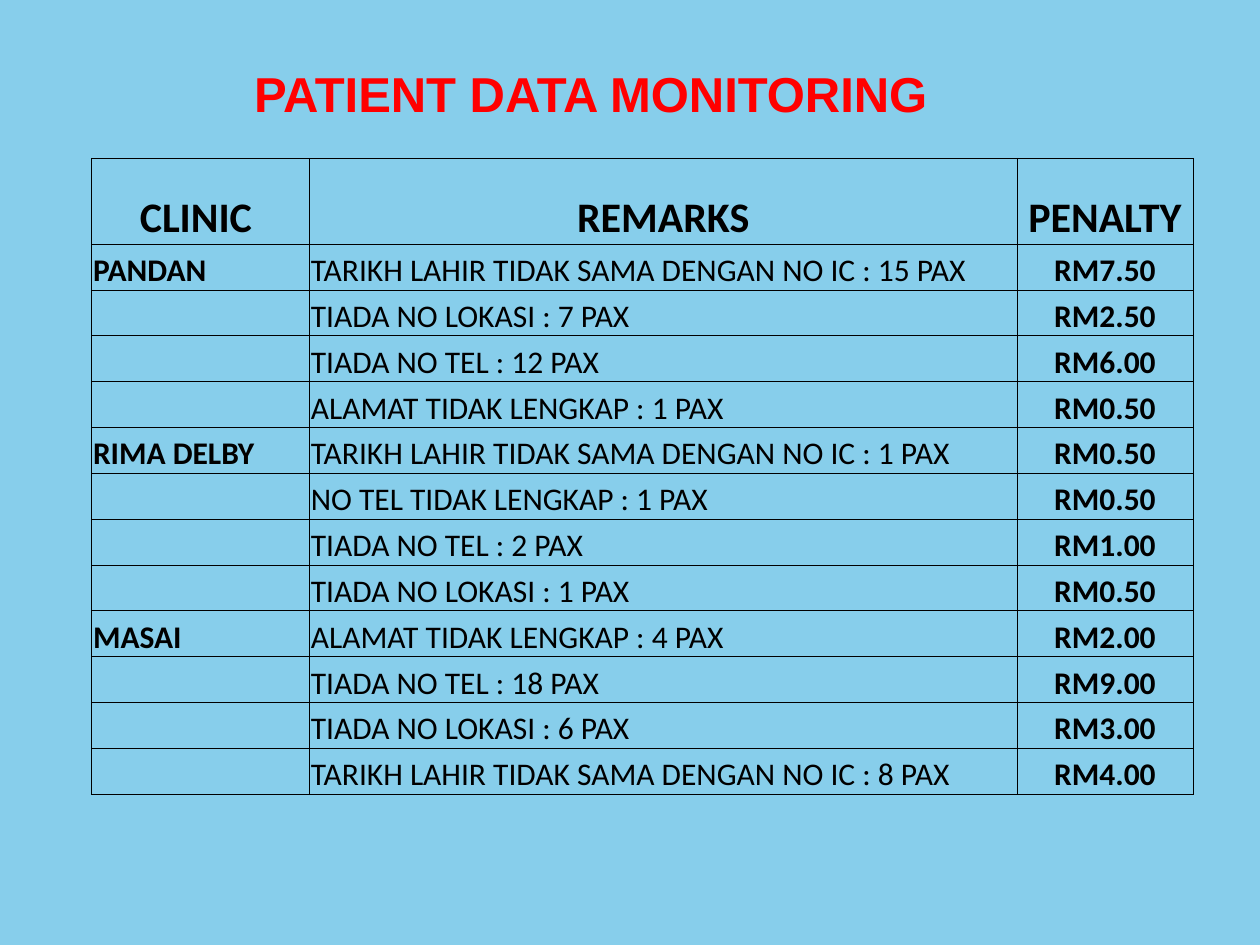
import pptx
import pptx.util
import pptx.dml.color
import pptx.enum.text
import pptx.oxml
import pptx.oxml.ns
from lxml import etree

Pt = pptx.util.Pt
ALIGN = pptx.enum.text.PP_ALIGN
ANCHOR = pptx.enum.text.MSO_ANCHOR

COLORS = {"sky": "87CEEB", "red": "FF0000", "black": "000000"}
HEADS = ["CLINIC ", "REMARKS", "PENALTY"]
CLINICS = {
    "PANDAN": [
        ("TARIKH LAHIR TIDAK SAMA DENGAN NO IC : 15 PAX", "RM7.50"),
        ("TIADA NO LOKASI : 7 PAX", "RM2.50"),
        ("TIADA NO TEL : 12 PAX", "RM6.00"),
        ("ALAMAT TIDAK LENGKAP : 1 PAX", "RM0.50"),
    ],
    "RIMA DELBY": [
        ("TARIKH LAHIR TIDAK SAMA DENGAN NO IC : 1 PAX", "RM0.50"),
        ("NO TEL TIDAK LENGKAP : 1 PAX", "RM0.50"),
        ("TIADA NO TEL : 2 PAX", "RM1.00"),
        ("TIADA NO LOKASI : 1 PAX", "RM0.50"),
    ],
    "MASAI": [
        ("ALAMAT TIDAK LENGKAP : 4 PAX", "RM2.00"),
        ("TIADA NO TEL : 18 PAX", "RM9.00"),
        ("TIADA NO LOKASI : 6 PAX", "RM3.00"),
        ("TARIKH LAHIR TIDAK SAMA DENGAN NO IC : 8 PAX", "RM4.00"),
    ],
}
WIDTHS = [124.5, 404.3, 100.5]
HEAD_H, ROW_H = 49, 26.2
INSETS = {
    "margin_left": Pt(0.75),
    "margin_right": Pt(0.75),
    "margin_top": Pt(0.75),
    "margin_bottom": 0,
    "vertical_anchor": ANCHOR.BOTTOM,
}


def apply(target, values):
    for name, value in values.items():
        setattr(target, name, value)


def paint(color, name):
    color.rgb = pptx.dml.color.RGBColor.from_string(COLORS[name])


def write(frame, text, align, color, **style):
    para = frame.paragraphs[0]
    para.alignment = align
    run = para.add_run()
    run.text = text
    apply(run.font, style)
    paint(run.font.color, color)


def border(cell):
    props = cell._tc.get_or_add_tcPr()
    qn = pptx.oxml.ns.qn
    for side in ("lnL", "lnR", "lnT", "lnB"):
        line = etree.SubElement(props, qn(f"a:{side}"), w=str(Pt(0.5)))
        fill = etree.SubElement(line, qn("a:solidFill"))
        etree.SubElement(fill, qn("a:srgbClr"), val=COLORS["black"])


def title(slide, text):
    box = slide.shapes.add_textbox(Pt(57.6), Pt(30.2), Pt(552.2), Pt(50.4))
    apply(box.text_frame, {"word_wrap": True, "margin_top": Pt(6)})
    write(box.text_frame, text, ALIGN.CENTER, "red",
          name="Arial", size=Pt(28), bold=True)


def grid(slide, rows):
    high = HEAD_H + ROW_H * (len(rows) - 1)
    table = slide.shapes.add_table(
        len(rows), len(WIDTHS), Pt(52.4), Pt(90.5), Pt(sum(WIDTHS)), Pt(high)
    ).table
    apply(table, {"first_row": False, "horz_banding": False})
    for col, width in zip(table.columns, WIDTHS):
        col.width = Pt(width)
    for i, row in enumerate(rows):
        head = i == 0
        table.rows[i].height = Pt(HEAD_H if head else ROW_H)
        for j, text in enumerate(row):
            cell = table.cell(i, j)
            apply(cell, INSETS)
            border(cell)
            cell.fill.background()
            if text:
                align = ALIGN.CENTER if head or j == 2 else ALIGN.LEFT
                write(cell.text_frame, text, align, "black", name="Calibri",
                      size=Pt(24 if head else 18), bold=head or j != 1)


def main():
    deck = pptx.Presentation()
    apply(deck, {"slide_width": Pt(720), "slide_height": Pt(540)})
    slide = deck.slides.add_slide(deck.slide_layouts[6])
    slide.background.fill.solid()
    paint(slide.background.fill.fore_color, "sky")
    title(slide, " PATIENT DATA MONITORING")
    rows = [HEADS]
    for clinic, notes in CLINICS.items():
        for i, (remark, cost) in enumerate(notes):
            rows.append(["" if i else clinic, remark, cost])
    grid(slide, rows)
    deck.save("out.pptx")


if __name__ == "__main__":
    main()
